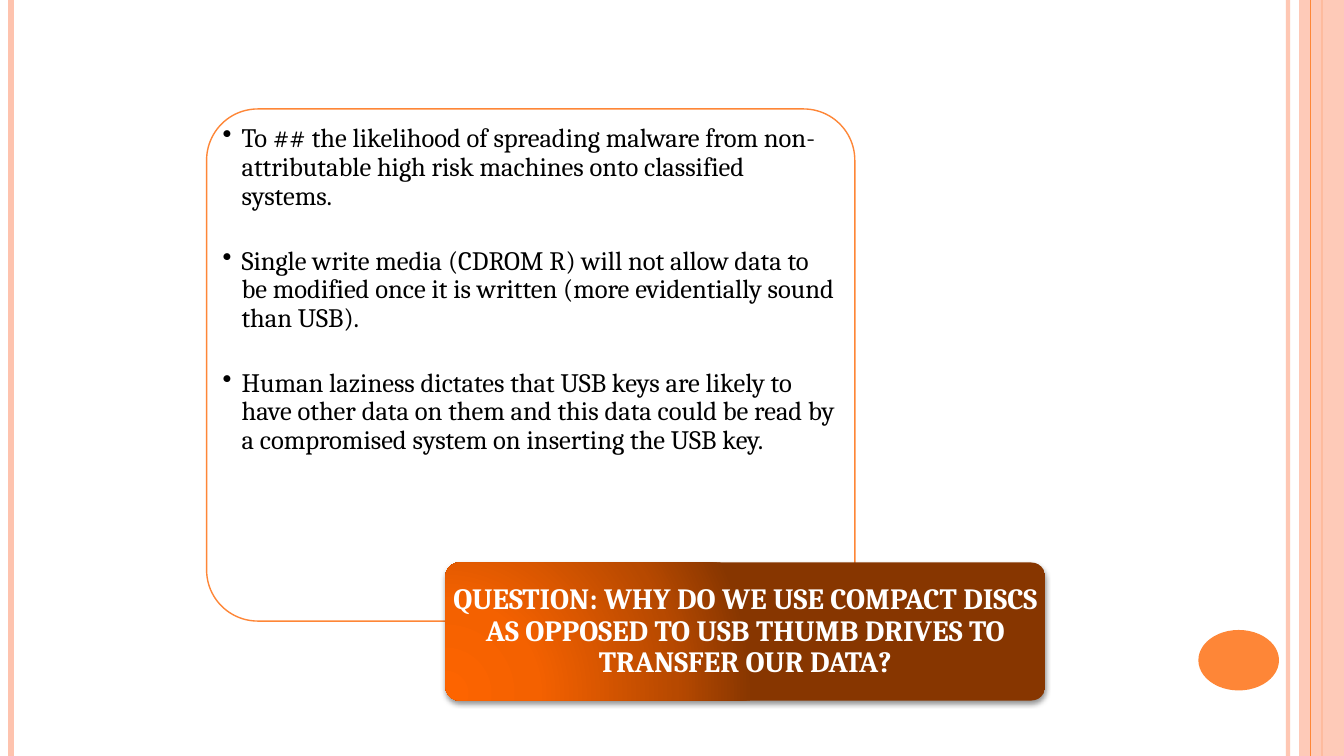
import pptx
import pptx.dml.color
import pptx.enum.shapes
import pptx.enum.text
import pptx.oxml
import pptx.oxml.ns
import pptx.util
from dataclasses import dataclass

Pt = pptx.util.Pt
SHAPE = pptx.enum.shapes.MSO_SHAPE
ANCHOR = pptx.enum.text.MSO_ANCHOR
ALIGN = pptx.enum.text.PP_ALIGN
NS = pptx.oxml.ns.nsdecls("a")


@dataclass(frozen=True)
class Theme:
    font: str = "Cambria"
    orange: str = "FE8637"
    peach: str = "FEC3AE"
    white: str = "FFFFFF"
    black: str = "000000"
    banner: tuple = ((0, "FD6400"), (30, "F46100"), (75, "B74900"), (100, "873600"))
    reason_size: float = 19
    question_size: float = 21


THEME = Theme()
WIDTH, HEIGHT = 960, 540

REASONS = (
    "To ## the likelihood of spreading malware from non-attributable high risk "
    "machines onto classified systems.",
    "Single write media (CDROM R) will not allow data to be modified once it is "
    "written (more evidentially sound than USB).",
    "Human laziness dictates that USB keys are likely to have other data on them "
    "and this data could be read by a compromised system on inserting the USB key.",
)
QUESTION = ("QUESTION: WHY DO WE USE COMPACT DISCS AS OPPOSED TO USB THUMB DRIVES "
            "TO TRANSFER OUR DATA?")


def rgb(color):
    return pptx.dml.color.RGBColor.from_string(color)


def set_alpha(colored, percent):
    """Make the first solid colour under an element partly transparent."""
    color = colored.find(".//" + pptx.oxml.ns.qn("a:srgbClr"))
    color.append(pptx.oxml.parse_xml(f'<a:alpha {NS} val="{percent * 1000}"/>'))


def add_stripe(slide, x, color, weight, alpha=100):
    stripe = slide.shapes.add_connector(
        pptx.enum.shapes.MSO_CONNECTOR.STRAIGHT, Pt(x), Pt(0), Pt(x), Pt(HEIGHT))
    stripe.line.color.rgb = rgb(color)
    stripe.line.width = Pt(weight)
    properties = stripe._element.spPr
    if alpha < 100:
        set_alpha(properties, alpha)
    properties.append(pptx.oxml.parse_xml(f"<a:effectLst {NS}/>"))


def add_panel(slide, kind, left, top, width, height, fill, alpha=100, outline=None):
    panel = slide.shapes.add_shape(kind, Pt(left), Pt(top), Pt(width), Pt(height))
    panel.shadow.inherit = False
    panel.fill.solid()
    panel.fill.fore_color.rgb = rgb(fill)
    if alpha < 100:
        set_alpha(panel._element.spPr, alpha)
    if outline:
        panel.line.color.rgb = rgb(outline)
        panel.line.width = Pt(1)
    else:
        panel.line.fill.background()
    if kind == SHAPE.ROUNDED_RECTANGLE:
        panel.adjustments[0] = 0.1
    return panel


def add_banner_finish(banner):
    """Give the banner its radial gradient and soft shadow."""
    stops = "".join(f'<a:gs pos="{position * 1000}"><a:srgbClr val="{color}"/></a:gs>'
                    for position, color in THEME.banner)
    gradient = pptx.oxml.parse_xml(
        f'<a:gradFill {NS} rotWithShape="1"><a:gsLst>{stops}</a:gsLst>'
        '<a:path path="circle"><a:fillToRect l="5000" t="100000" r="120000" b="10000"/>'
        '</a:path></a:gradFill>')
    properties = banner._element.spPr
    solid = properties.find(pptx.oxml.ns.qn("a:solidFill"))
    properties.replace(solid, gradient)
    effects = properties.find(pptx.oxml.ns.qn("a:effectLst"))
    effects.append(pptx.oxml.parse_xml(
        f'<a:outerShdw {NS} blurRad="{Pt(4)}" dist="{Pt(1.6)}" dir="5400000" '
        f'rotWithShape="0"><a:srgbClr val="{THEME.black}"><a:alpha val="42000"/>'
        '</a:srgbClr></a:outerShdw>'))


def write_text(panel, paragraphs, size, color, align, anchor, margin, gap=0, bold=False):
    frame = panel.text_frame
    frame.word_wrap = True
    frame.vertical_anchor = anchor
    frame.margin_left = frame.margin_right = Pt(margin)
    frame.margin_top = frame.margin_bottom = Pt(margin)
    frame.text = "\n".join(paragraphs)
    for paragraph in frame.paragraphs:
        paragraph.alignment = align
        paragraph.line_spacing = 0.9
        paragraph.space_after = Pt(gap)
        font = paragraph.runs[0].font
        font.name = THEME.font
        font.size = Pt(size)
        font.bold = bold
        font.color.rgb = rgb(color)


def add_bullets(panel, indent):
    for paragraph in panel.text_frame.paragraphs:
        properties = paragraph._p.get_or_add_pPr()
        properties.set("marL", str(Pt(indent)))
        properties.set("indent", str(-Pt(indent)))
        properties.append(pptx.oxml.parse_xml(f'<a:buChar {NS} char="•"/>'))


def main():
    deck = pptx.Presentation()
    deck.slide_width, deck.slide_height = Pt(WIDTH), Pt(HEIGHT)
    slide = deck.slides.add_slide(deck.slide_layouts[6])

    # Edge decoration
    add_stripe(slide, 920, THEME.peach, 3, alpha=93)
    add_stripe(slide, 8, THEME.peach, 4.5)
    add_stripe(slide, 944, THEME.orange, 1.5)
    add_panel(slide, SHAPE.RECTANGLE, 928, 0, WIDTH - 928, HEIGHT, THEME.peach, alpha=87)
    add_stripe(slide, 936, THEME.orange, 0.75)
    add_panel(slide, SHAPE.OVAL, 856, 450, 57.6, 43.2, THEME.orange)

    # Reasons
    reasons = add_panel(slide, SHAPE.ROUNDED_RECTANGLE, 147.6, 77.8, 463, 365.8,
                        THEME.white, alpha=90, outline=THEME.orange)
    write_text(reasons, REASONS, THEME.reason_size, THEME.black, ALIGN.LEFT,
               ANCHOR.TOP, margin=0.7, gap=25.7)
    add_bullets(reasons, 13.6)

    # Question banner
    question = add_panel(slide, SHAPE.ROUNDED_RECTANGLE, 318.2, 401.8, 428.4, 98.6,
                         THEME.banner[0][1])
    add_banner_finish(question)
    write_text(question, [QUESTION], THEME.question_size, THEME.white, ALIGN.CENTER,
               ANCHOR.MIDDLE, margin=2.8, bold=True)

    deck.save("out.pptx")


if __name__ == "__main__":
    main()
